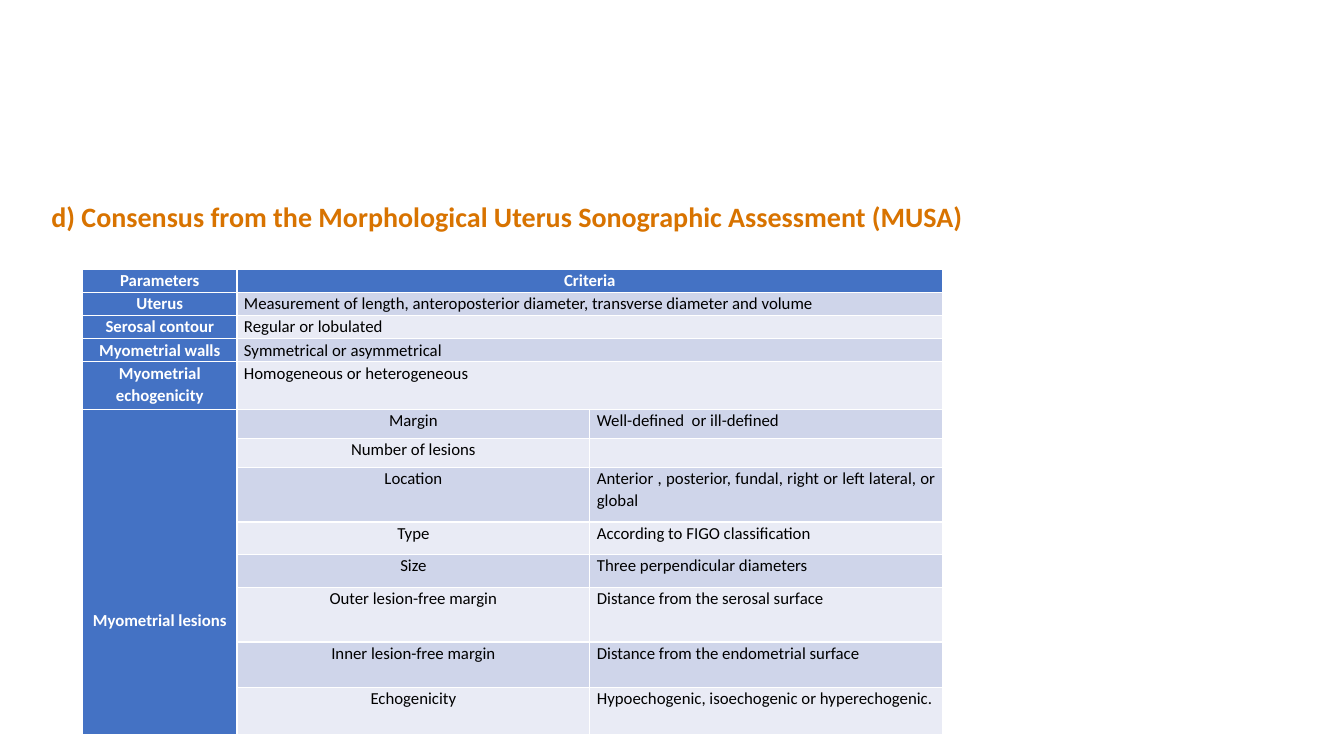
from pptx import Presentation
from pptx.dml.color import RGBColor
from pptx.enum.text import MSO_ANCHOR as Anchor, MSO_AUTO_SIZE as AutoSize, PP_ALIGN as Align
from pptx.util import Inches, Pt

ORANGE = RGBColor(0xD8, 0x73, 0x00)
BLUE = RGBColor(0x44, 0x72, 0xC4)
WHITE = RGBColor(0xFF, 0xFF, 0xFF)
BLACK = RGBColor(0x00, 0x00, 0x00)
BANDS = [RGBColor(0xE9, 0xEB, 0xF5), RGBColor(0xCF, 0xD5, 0xEA)]

TITLE = "d) Consensus from the Morphological Uterus Sonographic Assessment (MUSA)"
GENERAL = [
    ("Parameters", "Criteria"),
    ("Uterus", "Measurement of length, anteroposterior diameter, transverse diameter and volume"),
    ("Serosal contour", "Regular or lobulated"),
    ("Myometrial walls", "Symmetrical or asymmetrical"),
    ("Myometrial echogenicity", "Homogeneous or heterogeneous"),
]
LESIONS = [
    ("Margin", "Well-defined  or ill-defined"),
    ("Number of lesions", ""),
    ("Location", "Anterior , posterior, fundal, right or left lateral, or global"),
    ("Type", "According to FIGO classification"),
    ("Size", "Three perpendicular diameters"),
    ("Outer lesion-free margin", "Distance from the serosal surface"),
    ("Inner lesion-free margin", "Distance from the endometrial surface"),
    ("Echogenicity", "Hypoechogenic, isoechogenic or hyperechogenic."),
]
COL_WIDTHS = [1.53, 3.5, 3.5]
ROW_HEIGHTS = [0.23] * 4 + [0.47, 0.29, 0.29, 0.54, 0.32, 0.33, 0.54, 0.45, 0.47]


def add_title(s, left, top, width, height):
    sp = s.shapes.title
    sp.left, sp.top, sp.width, sp.height = map(Inches, (left, top, width, height))
    tf = sp.text_frame
    tf.text = TITLE
    tf.word_wrap = True
    tf.auto_size = AutoSize.NONE
    tf.vertical_anchor = Anchor.TOP
    p = tf.paragraphs[0]
    p.alignment = Align.LEFT
    p.font.name = "Calibri"
    p.font.size = Pt(20)
    p.font.bold = True
    p.font.color.rgb = ORANGE


def fill_cell(cell, text, fill, align=Align.CENTER, heading=False):
    cell.fill.solid()
    cell.fill.fore_color.rgb = fill
    cell.margin_left = cell.margin_right = Inches(0.07)
    cell.margin_top = cell.margin_bottom = 0
    cell.text = text
    p = cell.text_frame.paragraphs[0]
    p.alignment = align
    p.line_spacing = 1.07
    p.space_after = Pt(8)
    p.font.name = "Calibri"
    p.font.size = Pt(12)
    p.font.bold = heading
    p.font.color.rgb = WHITE if heading else BLACK


def add_criteria_table(s, left, top, width, height):
    box = map(Inches, (left, top, width, height))
    table = s.shapes.add_table(len(ROW_HEIGHTS), len(COL_WIDTHS), *box).table
    table.first_col = True
    for column, w in zip(table.columns, COL_WIDTHS):
        column.width = Inches(w)
    for row, h in zip(table.rows, ROW_HEIGHTS):
        row.height = Inches(h)

    for i, (parameter, criteria) in enumerate(GENERAL):
        table.cell(i, 1).merge(table.cell(i, 2))
        fill_cell(table.cell(i, 0), parameter, BLUE, heading=True)
        if i == 0:
            fill_cell(table.cell(i, 1), criteria, BLUE, heading=True)
        else:
            fill_cell(table.cell(i, 1), criteria, BANDS[i % 2], Align.JUSTIFY)

    first = len(GENERAL)
    group = table.cell(first, 0)
    group.merge(table.cell(len(ROW_HEIGHTS) - 1, 0))
    fill_cell(group, "Myometrial lesions", BLUE, heading=True)
    group.vertical_anchor = Anchor.MIDDLE
    group.margin_top = Inches(0.95)
    for i, (feature, criteria) in enumerate(LESIONS, first):
        fill_cell(table.cell(i, 1), feature, BANDS[i % 2])
        fill_cell(table.cell(i, 2), criteria, BANDS[i % 2], Align.JUSTIFY)


def main():
    prs = Presentation()
    prs.slide_width, prs.slide_height = Inches(13.33), Inches(7.5)
    s = prs.slides.add_slide(prs.slide_layouts[5])
    add_title(s, 0.41, 1.93, 11.68, 0.74)
    add_criteria_table(s, 0.82, 2.67, 8.53, 4.62)
    prs.save("out.pptx")


if __name__ == "__main__":
    main()
